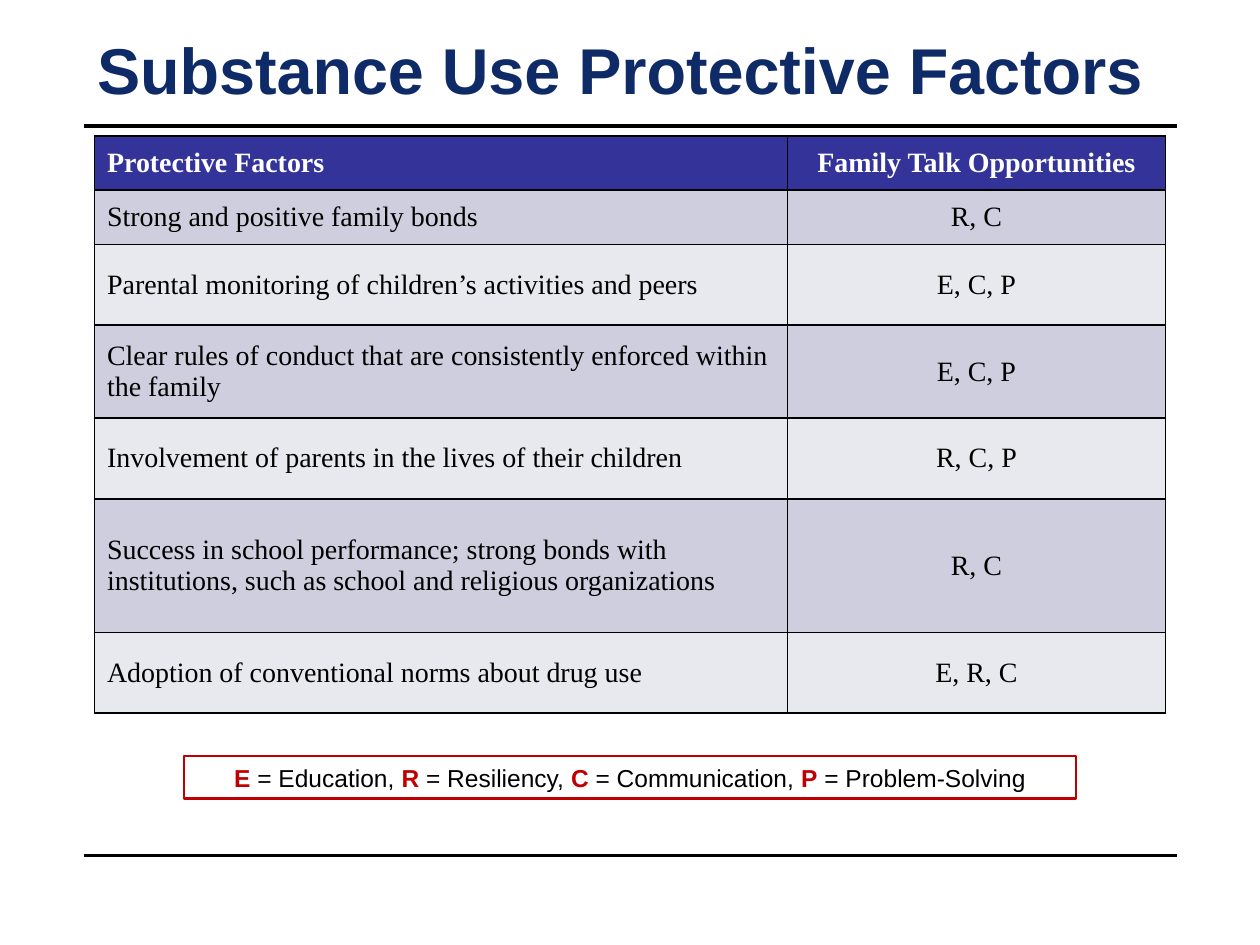
from dataclasses import dataclass

from lxml.etree import SubElement as Sub
from pptx import Presentation
from pptx.dml.color import RGBColor as RGB
from pptx.enum.shapes import MSO_CONNECTOR as Conn, MSO_SHAPE as Form
from pptx.enum.text import MSO_ANCHOR as Anchor, PP_ALIGN as Align
from pptx.oxml.ns import qn
from pptx.util import Inches, Pt


@dataclass(frozen=True)
class Theme:
    navy: str = "0E2A67"
    head: str = "333399"
    bands: tuple = ("CECEDE", "E8E8EF")
    red: str = "C00000"
    black: str = "000000"
    white: str = "FFFFFF"
    sans: str = "Arial"
    serif: str = "Times New Roman"
    title: int = 37
    cell: int = 16
    key: int = 14


T = Theme()
LEFT, WIDTH = 0.67, 8.67
COLS = (5.5, 3)
HEADS = ("Protective Factors", "Family Talk Opportunities")
ROWS = (
    (0.43, "Strong and positive family bonds", "R, C"),
    (0.64, "Parental monitoring of children’s activities and peers", "E, C, P"),
    (0.74, "Clear rules of conduct that are consistently enforced within the family", "E, C, P"),
    (0.64, "Involvement of parents in the lives of their children", "R, C, P"),
    (1.06, "Success in school performance; strong bonds with institutions, "
           "such as school and religious organizations", "R, C"),
    (0.64, "Adoption of conventional norms about drug use", "E, R, C"),
)
KEYS = (("E", "Education"), ("R", "Resiliency"),
        ("C", "Communication"), ("P", "Problem-Solving"))


def add_run(para, text, face, size, color, bold=False):
    run = para.add_run()
    run.text = text
    font = run.font
    font.name, font.size, font.bold = face, Pt(size), bold
    font.color.rgb = RGB.from_string(color)


def add_rule(slide, y):
    line = slide.shapes.add_connector(
        Conn.STRAIGHT, Inches(LEFT), Inches(y), Inches(LEFT + WIDTH), Inches(y))
    line.line.color.rgb = RGB.from_string(T.black)
    line.line.width = Pt(2.25)
    Sub(line._element.spPr, qn("a:effectLst"))


def set_title(slide, text):
    box = slide.shapes.title
    box.left, box.top = Inches(LEFT), Inches(0.17)
    box.width, box.height = Inches(WIDTH), Inches(0.75)
    frame = box.text_frame
    frame.word_wrap = True
    frame.vertical_anchor = Anchor.MIDDLE
    para = frame.paragraphs[0]
    para.alignment = Align.LEFT
    add_run(para, text, T.sans, T.title, T.navy, True)


def set_edges(cell):
    props = cell._tc.get_or_add_tcPr()
    for i, side in enumerate(("lnL", "lnR", "lnT", "lnB")):
        edge = props.makeelement(qn(f"a:{side}"), {"w": str(Pt(1))})
        fill = Sub(edge, qn("a:solidFill"))
        Sub(fill, qn("a:srgbClr"), val=T.black)
        props.insert(i, edge)  # edges come before the cell fill


def set_cell(cell, text, col, fill, color, bold):
    cell.fill.solid()
    cell.fill.fore_color.rgb = RGB.from_string(fill)
    cell.vertical_anchor = Anchor.MIDDLE
    para = cell.text_frame.paragraphs[0]
    para.alignment = Align.CENTER if col else Align.LEFT
    add_run(para, text, T.serif, T.cell, color, bold)
    set_edges(cell)


def add_grid(slide):
    rows = ((0.43, *HEADS), *ROWS)
    high = sum(row[0] for row in rows)
    grid = slide.shapes.add_table(
        len(rows), len(COLS), Inches(0.75), Inches(1.08),
        Inches(sum(COLS)), Inches(high)).table
    for col, wide in zip(grid.columns, COLS):
        col.width = Inches(wide)
    for r, (tall, *texts) in enumerate(rows):
        grid.rows[r].height = Inches(tall)
        fill = T.bands[(r - 1) % 2] if r else T.head
        color = T.black if r else T.white
        for c, text in enumerate(texts):
            set_cell(grid.cell(r, c), text, c, fill, color, r == 0)


def add_key(slide):
    box = slide.shapes.add_shape(
        Form.RECTANGLE, Inches(1.46), Inches(6), Inches(7.08), Inches(0.34))
    box.shadow.inherit = False
    box.fill.background()
    box.line.color.rgb = RGB.from_string(T.red)
    box.line.width = Pt(1.5)
    frame = box.text_frame
    frame.word_wrap = True
    frame.vertical_anchor = Anchor.MIDDLE
    para = frame.paragraphs[0]
    para.alignment = Align.CENTER
    for i, (sign, name) in enumerate(KEYS):
        tail = ", " if i < len(KEYS) - 1 else ""
        add_run(para, sign, T.sans, T.key, T.red, True)
        add_run(para, f" = {name}{tail}", T.sans, T.key, T.black)


def main():
    deck = Presentation()
    deck.slide_width, deck.slide_height = Inches(10), Inches(7.5)
    slide = deck.slides.add_slide(deck.slide_layouts[5])  # title only

    # Rules above and below the content
    for y in (6.79, 1):
        add_rule(slide, y)

    # Title, table and letter key
    set_title(slide, "Substance Use Protective Factors")
    add_grid(slide)
    add_key(slide)

    deck.save("out.pptx")


if __name__ == "__main__":
    main()
